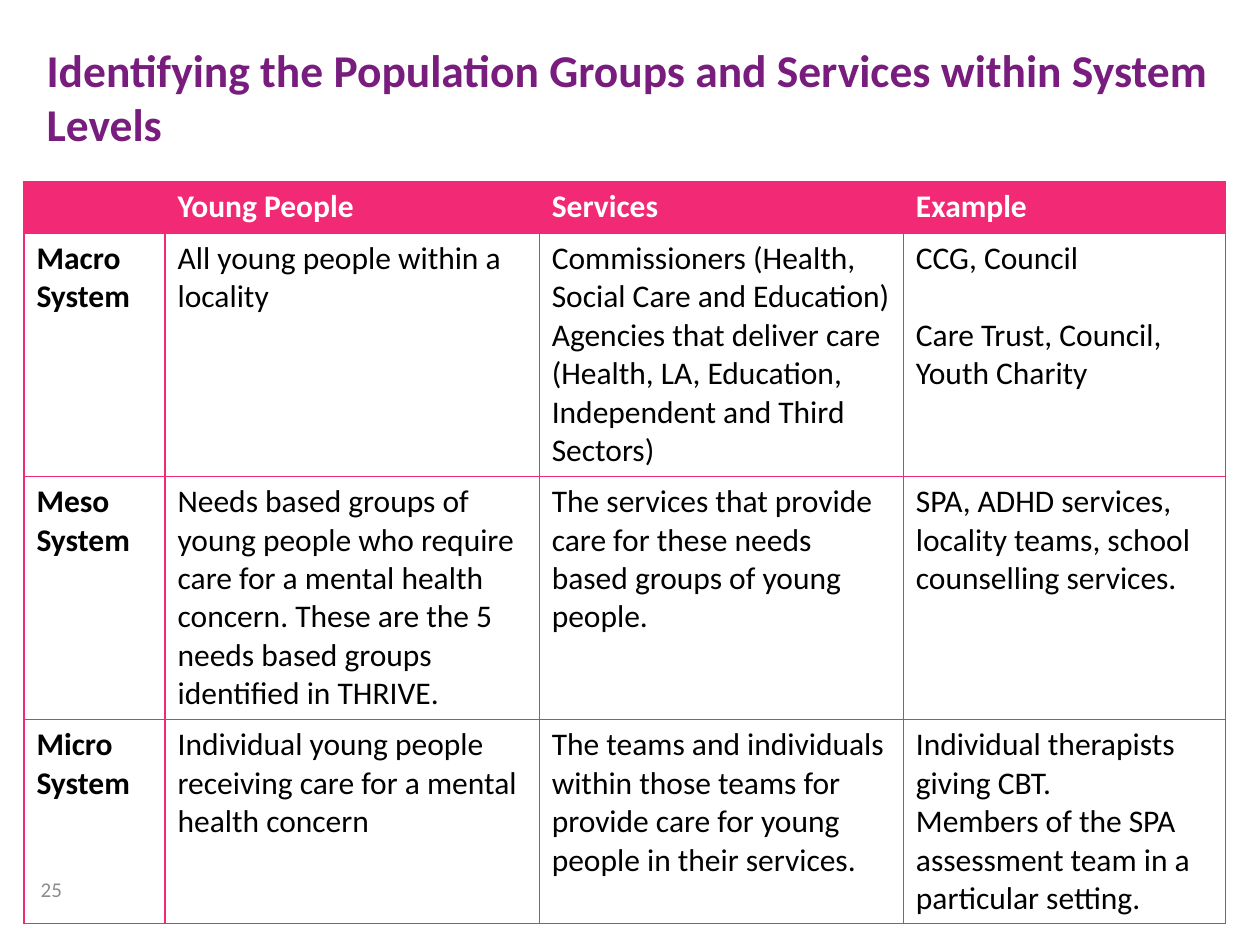
"""Build a slide with a table of population groups and services by system level."""
from dataclasses import dataclass

import lxml.etree
import pptx
import pptx.dml.color
import pptx.enum.text
import pptx.oxml.ns
import pptx.util

Inches = pptx.util.Inches
Pt = pptx.util.Pt
FONT = "Calibri"
COLORS = {
    "title": "781D7D",
    "accent": "F22975",
    "header_text": "FFFFFF",
    "text": "000000",
    "number": "8C8C8C",
}
COLUMN_WIDTHS = (1.12, 2.97, 2.89, 2.56)
ROW_HEIGHTS = (0.41, 1.93, 1.93, 1.62)
BLANK_LINE = 22


@dataclass(frozen=True)
class SystemLevel:
    name: str
    young_people: str
    services: tuple[str, ...]
    examples: tuple[str, ...]
    example_gap: int = 0


HEADERS = ("", "Young People", "Services", "Example")
LEVELS = (
    SystemLevel(
        "Macro System",
        "All young people within a locality",
        (
            "Commissioners (Health, Social Care and Education)",
            "Agencies that deliver care (Health, LA, Education, Independent and Third Sectors)",
        ),
        ("CCG, Council", "Care Trust, Council, Youth Charity"),
        BLANK_LINE,
    ),
    SystemLevel(
        "Meso System",
        "Needs based groups of young people who require care for a mental health concern. "
        "These are the 5 needs based groups identified in THRIVE.",
        ("The services that provide care for these needs based groups of young people.",),
        ("SPA, ADHD services, locality teams, school counselling services.",),
    ),
    SystemLevel(
        "Micro System",
        "Individual young people receiving care for a mental health concern",
        ("The teams and individuals within those teams for provide care for young people "
         "in their services.",),
        (
            "Individual therapists giving CBT.",
            "Members of the SPA assessment team in a particular setting.",
        ),
    ),
)


def rgb(name: str) -> pptx.dml.color.RGBColor:
    return pptx.dml.color.RGBColor.from_string(COLORS[name])


def add_run(paragraph, text: str, size: int, color: str, bold: bool = False) -> None:
    run = paragraph.add_run()
    run.text = text
    run.font.name = FONT
    run.font.size = Pt(size)
    run.font.bold = bold
    run.font.color.rgb = rgb(color)


def add_borders(cell) -> None:
    properties = cell._tc.get_or_add_tcPr()
    qn = pptx.oxml.ns.qn
    for index, side in enumerate(("lnL", "lnR", "lnT", "lnB")):
        line = lxml.etree.Element(qn(f"a:{side}"), w=str(Pt(0.75)))
        fill = lxml.etree.SubElement(line, qn("a:solidFill"))
        lxml.etree.SubElement(fill, qn("a:srgbClr"), val=COLORS["accent"])
        properties.insert(index, line)


def fill_cell(cell, texts: tuple[str, ...], header: bool = False,
              bold: bool = False, gap: int = 0) -> None:
    if header:
        cell.fill.solid()
        cell.fill.fore_color.rgb = rgb("accent")
    else:
        cell.fill.background()
    add_borders(cell)
    frame = cell.text_frame
    for index, text in enumerate(texts):
        paragraph = frame.add_paragraph() if index else frame.paragraphs[0]
        if index and gap:
            paragraph.space_before = Pt(gap)
        if text:
            add_run(paragraph, text, 18, "header_text" if header else "text", bold)


def format_title(title) -> None:
    title.left, title.top = Inches(0.27), Inches(0.28)
    title.width, title.height = Inches(9.45), Inches(0.63)
    frame = title.text_frame
    frame.auto_size = pptx.enum.text.MSO_AUTO_SIZE.NONE
    frame.vertical_anchor = pptx.enum.text.MSO_ANCHOR.TOP
    paragraph = frame.paragraphs[0]
    paragraph.alignment = pptx.enum.text.PP_ALIGN.LEFT
    add_run(paragraph, "Identifying the Population Groups and Services within System Levels",
            26, "title", True)


def add_page_number(slide, number: str) -> None:
    shape = slide.shapes.add_textbox(Inches(0.12), Inches(6.86), Inches(0.47), Inches(0.4))
    frame = shape.text_frame
    frame.word_wrap = True
    frame.vertical_anchor = pptx.enum.text.MSO_ANCHOR.MIDDLE
    paragraph = frame.paragraphs[0]
    paragraph.alignment = pptx.enum.text.PP_ALIGN.RIGHT
    add_run(paragraph, number, 12, "number")


def add_level_table(slide) -> None:
    table = slide.shapes.add_table(
        len(ROW_HEIGHTS), len(COLUMN_WIDTHS), Inches(0.19), Inches(1.44),
        Inches(sum(COLUMN_WIDTHS)), Inches(sum(ROW_HEIGHTS)),
    ).table
    for column, width in zip(table.columns, COLUMN_WIDTHS):
        column.width = Inches(width)
    for row, height in zip(table.rows, ROW_HEIGHTS):
        row.height = Inches(height)
    for column, header in enumerate(HEADERS):
        fill_cell(table.cell(0, column), (header,), header=True, bold=True)
    for row, level in enumerate(LEVELS, start=1):
        fill_cell(table.cell(row, 0), (level.name,), bold=True)
        fill_cell(table.cell(row, 1), (level.young_people,))
        fill_cell(table.cell(row, 2), level.services)
        fill_cell(table.cell(row, 3), level.examples, gap=level.example_gap)


def main() -> None:
    presentation = pptx.Presentation()
    presentation.slide_width = Inches(10)
    presentation.slide_height = Inches(7.5)
    slide = presentation.slides.add_slide(presentation.slide_layouts.get_by_name("Title Only"))
    format_title(slide.shapes.title)
    add_page_number(slide, "25")
    add_level_table(slide)
    presentation.save("out.pptx")


if __name__ == "__main__":
    main()
